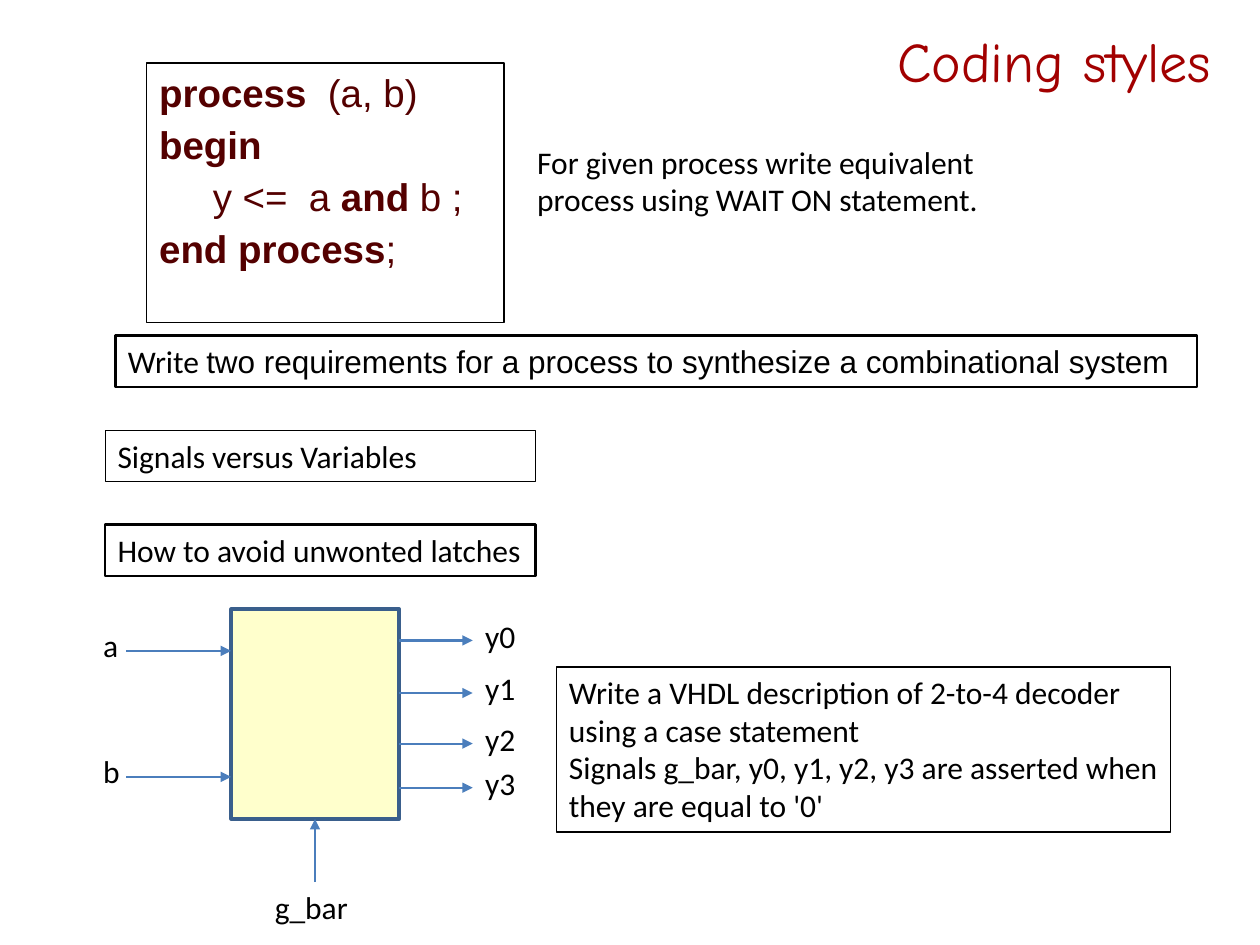
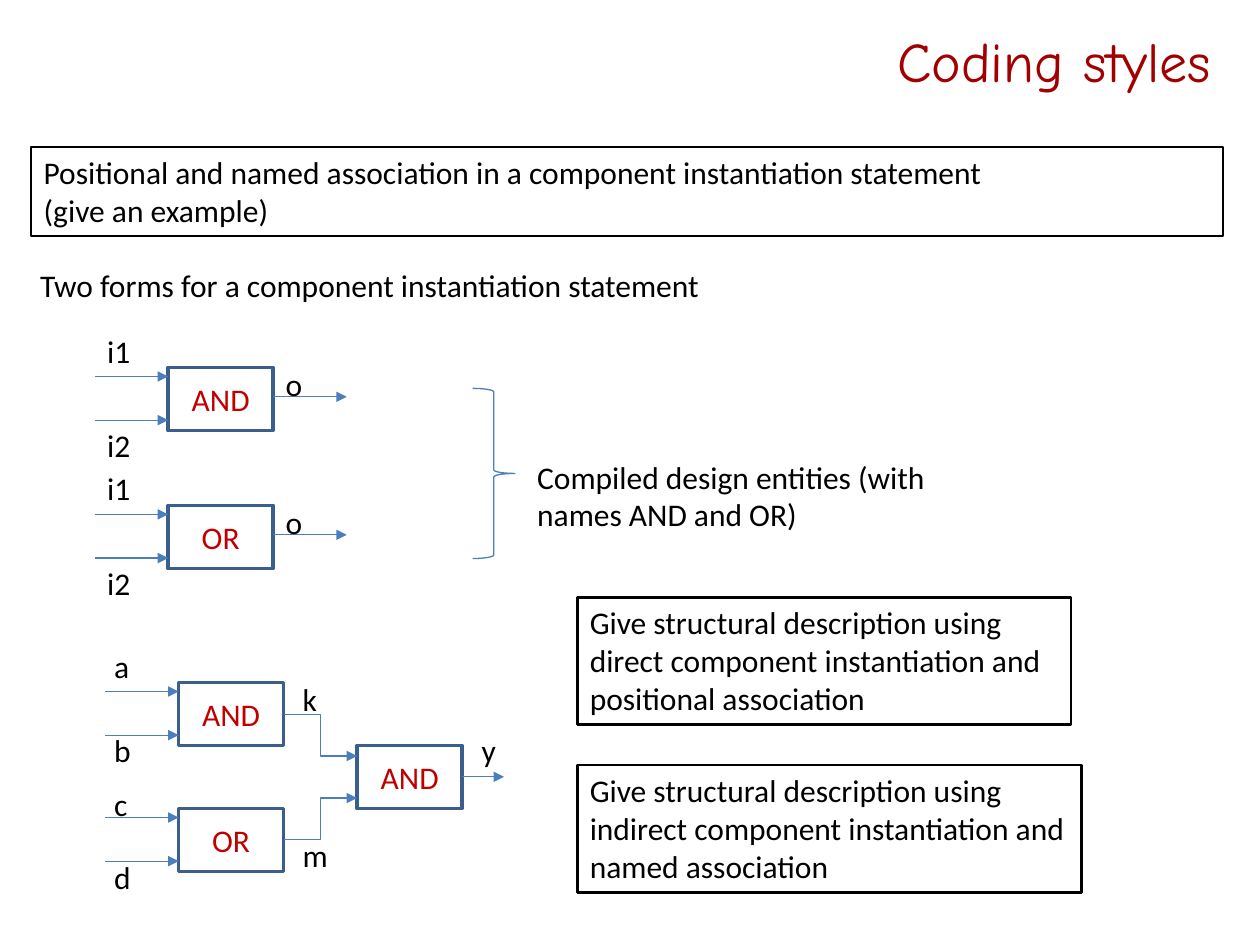
from lxml import etree
from pptx import Presentation
from pptx.dml.color import RGBColor
from pptx.enum.shapes import MSO_CONNECTOR, MSO_SHAPE
from pptx.enum.text import MSO_ANCHOR, PP_ALIGN
from pptx.oxml.ns import qn
from pptx.util import Cm, Pt

STRAIGHT, ELBOW = MSO_CONNECTOR.STRAIGHT, MSO_CONNECTOR.ELBOW
RECTANGLE, RIGHT_BRACE = MSO_SHAPE.RECTANGLE, MSO_SHAPE.RIGHT_BRACE
TOP, MIDDLE = MSO_ANCHOR.TOP, MSO_ANCHOR.MIDDLE
LEFT, CENTER, RIGHT = PP_ALIGN.LEFT, PP_ALIGN.CENTER, PP_ALIGN.RIGHT

COLORS = {
    "title": "A20000",
    "code": "540000",
    "text": "000000",
    "gate": "C00000",
    "outline": "3A5F8C",
    "wire": "4B7EBC",
    "decoder": "FFFFCC",
}
BODY_FONT, CODE_FONT, TITLE_FONT = "Calibri", "Arial", "Comic Neue"
ONE_LINE, TWO_LINES, THREE_LINES = 1.03, 1.8, 2.57
WIRE = 1.48
GATE_W, GATE_H = 2.12, 1.27
INPUT_OFFSETS = (0.18, 1.06)


def color(name):
    return RGBColor.from_string(COLORS[name])


class Deck:
    def __init__(self):
        self.presentation = Presentation()
        self.presentation.slide_width = Cm(25.4)
        self.presentation.slide_height = Cm(19.05)
        self.shapes = None

    def new_slide(self, title):
        blank = self.presentation.slide_layouts[6]
        self.shapes = self.presentation.slides.add_slide(blank).shapes
        self.text(1.63, 0.33, 23.04, 1.78, title, ink="title", size=32,
                  font=TITLE_FONT, align=RIGHT, anchor=MIDDLE)

    def fill_text(self, holder, paragraphs, ink="text", size=18, font=BODY_FONT,
                  align=LEFT, anchor=TOP):
        frame = holder.text_frame
        frame.word_wrap = True
        frame.vertical_anchor = anchor
        for i, content in enumerate(paragraphs):
            paragraph = frame.add_paragraph() if i else frame.paragraphs[0]
            paragraph.alignment = align
            runs = [(content, {})] if isinstance(content, str) else content
            for words, style in runs:
                run = paragraph.add_run()
                run.text = words
                run.font.name = style.get("font", font)
                run.font.size = Pt(size)
                run.font.bold = style.get("bold", False)
                run.font.color.rgb = color(ink)
        return frame

    def text(self, x, y, width, height, *paragraphs, border=None, **style):
        box = self.shapes.add_textbox(Cm(x), Cm(y), Cm(width), Cm(height))
        if border:
            box.line.color.rgb = color("text")
            box.line.width = Pt(border)
        return self.fill_text(box, paragraphs, **style)

    def label(self, x, y, words, width=0.43):
        self.text(x, y, width, ONE_LINE, words)

    def outline(self, kind, x, y, width, height, line="outline", weight=2, fill=None):
        shape = self.shapes.add_shape(kind, Cm(x), Cm(y), Cm(width), Cm(height))
        shape.shadow.inherit = False
        shape.line.color.rgb = color(line)
        shape.line.width = Pt(weight)
        if fill:
            shape.fill.solid()
            shape.fill.fore_color.rgb = color(fill)
        else:
            shape.fill.background()
        return shape

    def arrow(self, x1, y1, x2, y2, weight=0.75, kind=STRAIGHT):
        wire = self.shapes.add_connector(kind, Cm(x1), Cm(y1), Cm(x2), Cm(y2))
        wire.line.color.rgb = color("wire")
        wire.line.width = Pt(weight)
        properties = wire._element.spPr
        etree.SubElement(properties.find(qn("a:ln")), qn("a:tailEnd"), type="triangle")
        etree.SubElement(properties, qn("a:effectLst"))

    def gate(self, name, x, y, inputs=True):
        box = self.outline(RECTANGLE, x, y, GATE_W, GATE_H)
        self.fill_text(box, [name], "gate", align=CENTER, anchor=MIDDLE)
        if inputs:
            for offset in INPUT_OFFSETS:
                self.arrow(x - WIRE, y + offset, x, y + offset)

    def entity(self, name, x, y):
        self.gate(name, x, y)
        output = x + GATE_W
        self.arrow(output, y + 0.59, output + WIRE, y + 0.59)
        self.label(x - WIRE, y - 0.85, "i1", WIRE)
        self.label(x - WIRE, y + 1.06, "i2", WIRE)
        self.label(output, y - 0.17, "o", WIRE)


def add_process_slide(deck):
    deck.new_slide("Coding styles")
    bold = {"bold": True}
    code = deck.text(
        2.96, 1.27, 7.2, 5.24,
        [("process ", bold), (" (a, b)", {})],
        [("begin", bold)],
        [("y <=  a", {}), (" and", bold), (" b ;", {})],
        [("end process", bold), (";", {})],
        border=0.75, ink="code", size=22, font=CODE_FONT)
    for line in code.paragraphs:
        line.space_before = Pt(3.3)
    code.paragraphs[2]._p.get_or_add_pPr().set("marL", str(Cm(1.08)))

    deck.text(10.58, 2.75, 11.22, TWO_LINES,
              "For given process write equivalent process using WAIT ON statement.")
    deck.text(2.33, 6.77, 21.8, ONE_LINE,
              [("Write ", {}),
               ("two requirements for a process to synthesize a combinational system",
                {"font": CODE_FONT})],
              border=1.5)
    deck.text(2.12, 8.68, 8.68, ONE_LINE, "Signals versus Variables", border=0.5)
    deck.text(2.12, 10.58, 8.68, ONE_LINE, "How to avoid unwonted latches", border=1.5)

    deck.outline(RECTANGLE, 4.66, 12.28, 3.39, 4.23, fill="decoder")
    for name, y in (("a", 13.12), ("b", 15.66)):
        deck.arrow(2.54, y, 4.66, y, 1.25)
        deck.label(1.9, y - 0.63, name)
    deck.arrow(6.35, 17.78, 6.35, 16.51, 1.5)
    deck.label(5.29, 17.78, "g_bar", 2.12)
    for i, y in enumerate((12.91, 13.97, 14.99, 15.88)):
        deck.arrow(8.04, y, 9.53, y, 1.25)
        deck.label(9.53, y - 0.6, f"y{i}", 1.27)
    deck.text(11.22, 13.44, 12.38, 3.33,
              "Write a VHDL description of 2-to-4 decoder using a case statement",
              "Signals g_bar, y0, y1, y2, y3 are asserted when they are equal to '0'",
              border=1)


def add_instantiation_slide(deck):
    deck.new_slide("Coding styles")
    deck.text(0.63, 2.96, 24.03, TWO_LINES,
              "Positional and named association in a component instantiation statement",
              "(give an example)", border=1)
    deck.text(0.56, 5.23, 23.5, ONE_LINE,
              "Two forms for a component instantiation statement")

    deck.entity("AND", 3.39, 7.41)
    deck.entity("OR", 3.39, 10.19)
    deck.outline(RIGHT_BRACE, 9.53, 7.83, 0.85, 3.43, "wire", 0.75)
    deck.text(10.58, 9.1, 9.96, TWO_LINES,
              "Compiled design entities (with names AND and OR)")

    deck.gate("AND", 3.6, 13.76)
    deck.gate("OR", 3.6, 16.3)
    deck.gate("AND", 7.2, 15.03, inputs=False)
    deck.arrow(5.72, 14.4, 7.2, 15.24, kind=ELBOW)
    deck.arrow(5.72, 16.93, 7.2, 16.09, kind=ELBOW)
    deck.arrow(9.32, 15.66, 10.16, 15.66)
    for name, x, y in (("a", 2.12, 12.91), ("b", 2.12, 14.62), ("c", 2.12, 15.7),
                       ("d", 2.12, 17.17), ("k", 5.92, 13.59), ("m", 5.92, 16.72),
                       ("y", 9.53, 14.61)):
        deck.label(x, y, name)

    for y, width, form, association in ((12.04, 9.95, "direct", "positional"),
                                        (15.42, 10.16, "indirect", "named")):
        deck.text(11.64, y, width, THREE_LINES,
                  f"Give structural description using {form} component "
                  f"instantiation and {association} association", border=1.5)


def main():
    deck = Deck()
    add_process_slide(deck)
    add_instantiation_slide(deck)
    deck.presentation.save("out.pptx")


if __name__ == "__main__":
    main()
